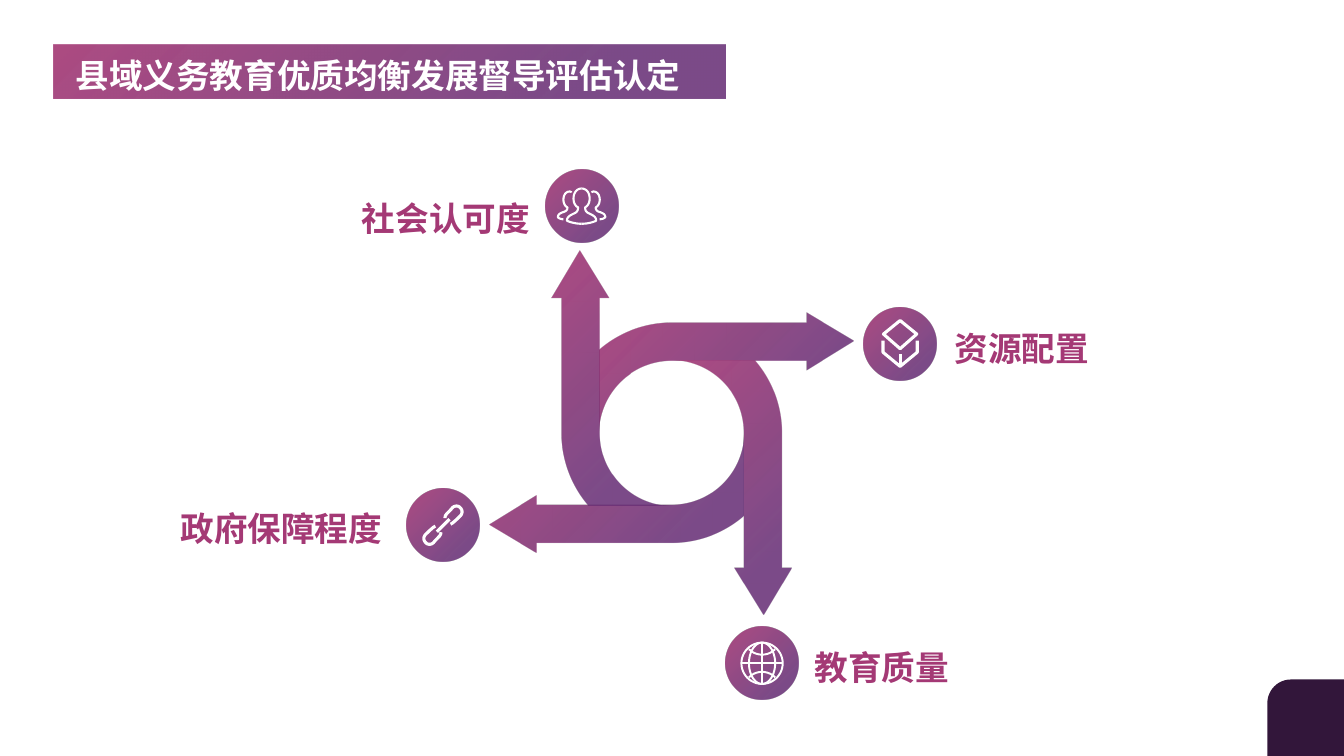
from dataclasses import dataclass
from math import acos, cos, pi, sin

from lxml.etree import SubElement
from pptx import Presentation
from pptx.dml.color import RGBColor
from pptx.enum.shapes import MSO_SHAPE as Preset
from pptx.enum.text import PP_ALIGN as Align
from pptx.oxml.ns import qn
from pptx.util import Inches, Pt

# The grid has square cells: 133.33 columns by 75 rows
CELL = Inches(0.1)
COLUMNS, ROWS = 133.33, 75
FONT = "Noto Sans CJK SC"
PURPLE, MAGENTA, DARK, WHITE = "652D74", "A43975", "32163A", "FFFFFF"
GRADIENT = [(0.21, PURPLE, 85), (1, "A53975", 90)]
DISC_SIZE = 7.25

Point = tuple[float, float]


@dataclass
class Stroke:
    points: list[Point]
    closed: bool = False

    def flipped(self, x_sign: int, y_sign: int) -> "Stroke":
        return Stroke([(x * x_sign, y * y_sign) for x, y in self.points], self.closed)


@dataclass
class Topic:
    text: str
    text_column: float
    text_row: float
    disc_column: float
    disc_row: float
    icon: list[Stroke]
    weight: float


def cells(count: float) -> int:
    return round(count * CELL)


def color(value: str) -> RGBColor:
    return RGBColor.from_string(value)


# Geometry
def arc(x_radius: float, y_radius: float, start: float = 0, end: float = 2 * pi) -> list[Point]:
    steps = 48
    angles = [start + (end - start) * i / steps for i in range(steps + 1)]
    return [(x_radius * cos(a), y_radius * sin(a)) for a in angles]


def curve(*controls: Point) -> Stroke:
    """Chain of cubic curves: a start, then three points for each curve."""
    points, steps = [controls[0]], 10
    for first in range(0, len(controls) - 1, 3):
        part = controls[first:first + 4]
        for step in range(1, steps + 1):
            t = step / steps
            weights = ((1 - t) ** 3, 3 * t * (1 - t) ** 2, 3 * t * t * (1 - t), t ** 3)
            points.append((sum(w * p[0] for w, p in zip(weights, part)),
                           sum(w * p[1] for w, p in zip(weights, part))))
    return Stroke(points)


# Icons, in cells from the middle of their disc
latitude = curve((-1.3, -1.4), (-0.6, -0.67), (0.6, -0.67), (1.3, -1.4))
GLOBE = [
    Stroke(arc(2.05, 2.05), True), Stroke(arc(1.3, 2.05), True),
    Stroke([(-2, 0), (2, 0)]), Stroke([(0, -2), (0, 2)]),
    latitude, latitude.flipped(1, -1),
]
front_person = curve(
    (0, -1.75), (0.5, -1.75), (0.8, -1.3), (0.8, -0.75), (0.8, -0.3), (0.6, 0), (0.35, 0.12),
    (0.35, 0.6), (0.6, 0.65), (0.9, 0.8), (1.2, 0.95), (1.45, 1.1), (1.45, 1.45),
    (1, 1.65), (0.5, 1.75), (0, 1.75))
back_person = curve(
    (1, -1.35), (1.05, -1.42), (1.1, -1.45), (1.2, -1.45), (1.55, -1.45), (1.8, -1.1), (1.8, -0.65),
    (1.8, -0.3), (1.65, 0), (1.4, 0.13), (1.4, 0.45), (1.65, 0.55), (1.85, 0.6),
    (2.1, 0.7), (2.35, 0.8), (2.35, 1.1), (2.2, 1.25), (2, 1.3), (1.8, 1.3))
PEOPLE = [stroke.flipped(side, 1) for stroke in (front_person, back_person) for side in (1, -1)]
BOX = [
    Stroke([(0, -2.3), (1.65, -0.95), (0, 0.5), (-1.65, -0.95)], True),
    Stroke([(-1.7, -0.3), (-1.7, 0.85), (0, 2.25), (1.7, 0.85), (1.7, -0.3)]),
    Stroke([(0, 1.05), (0, 2.25)]),
]
link = curve(
    (0.2, -0.7), (0.2, -0.9), (0.3, -1.05), (0.4, -1.15), (0.6, -1.35), (0.8, -1.55), (0.95, -1.75),
    (1.2, -1.95), (1.5, -1.95), (1.7, -1.75), (1.95, -1.5), (1.95, -1.2), (1.75, -0.95),
    (1.55, -0.75), (1.3, -0.5), (1.05, -0.3), (0.95, -0.2), (0.85, -0.15), (0.75, -0.1))
CHAIN = [link, link.flipped(-1, -1), Stroke([(-0.6, 0.65), (0.65, -0.6)])]

TOPICS = [
    Topic("资源配置", 94.7, 30.5, 89.3, 34.1, BOX, 2.2),
    Topic("社会认可度", 35.9, 17.6, 57.7, 20.45, PEOPLE, 1.5),
    Topic("政府保障程度", 17.9, 48.4, 43.95, 52.1, CHAIN, 2.2),
    Topic("教育质量", 80.8, 62.2, 75.6, 65.8, GLOBE, 1.4),
]

# One arrow of the ring, in cells from the middle of the ring
RING_CENTRE = (66.65, 42.95)
INNER, OUTER = 7.15, 10.9
ARROW = (arc(INNER, INNER, pi, 1.5 * pi)
         + [(13.35, -INNER), (13.35, -6.2), (18.05, -9.1), (13.35, -11.9), (13.35, -OUTER)]
         + arc(OUTER, OUTER, 1.5 * pi, 2 * pi - acos(-INNER / OUTER)))


# Drawing
def fill_gradient(shape) -> None:
    shape.shadow.inherit = False
    shape.line.fill.background()
    shape.fill.gradient()
    shape.fill.gradient_angle = 135
    for stop, (position, value, opacity) in zip(shape.fill.gradient_stops, GRADIENT):
        stop.position = position
        stop.color.rgb = color(value)
    tones = shape.element.spPr.iter(qn("a:srgbClr"))
    for tone, (_, _, opacity) in zip(tones, GRADIENT):
        SubElement(tone, qn("a:alpha")).set("val", str(opacity * 1000))


def add_preset(slide, preset: Preset, left: float, top: float, width: float, height: float):
    return slide.shapes.add_shape(preset, *map(cells, (left, top, width, height)))


def add_outline(slide, centre: Point, strokes: list[Stroke]):
    builder = None
    for stroke in strokes:
        start, *rest = [(cells(centre[0] + x), cells(centre[1] + y)) for x, y in stroke.points]
        if builder is None:
            builder = slide.shapes.build_freeform(*start)
        else:
            builder.move_to(*start)
        builder.add_line_segments(rest, close=stroke.closed)
    shape = builder.convert_to_shape()
    shape.shadow.inherit = False
    return shape


def add_text(slide, text: str, left: float, top: float, width: float, height: float, value: str):
    box = slide.shapes.add_textbox(*map(cells, (left, top, width, height)))
    box.text_frame.word_wrap = True
    paragraph = box.text_frame.paragraphs[0]
    paragraph.text = text
    font = paragraph.font
    font.name, font.size, font.bold = FONT, Pt(24), True
    font.color.rgb = color(value)
    defaults = next(box.element.iter(qn("a:defRPr")))
    SubElement(defaults, qn("a:ea")).set("typeface", FONT)
    return box.text_frame


def add_topic(slide, topic: Topic) -> None:
    centre = (topic.disc_column, topic.disc_row)
    corner = [middle - DISC_SIZE / 2 for middle in centre]
    fill_gradient(add_preset(slide, Preset.OVAL, *corner, DISC_SIZE, DISC_SIZE))
    icon = add_outline(slide, centre, topic.icon)
    icon.fill.background()
    icon.line.color.rgb = color(WHITE)
    icon.line.width = Pt(topic.weight)
    frame = add_text(slide, topic.text, topic.text_column, topic.text_row, 24.2, 5.3, MAGENTA)
    frame.margin_left = frame.margin_right = frame.margin_top = frame.margin_bottom = 0
    frame.paragraphs[0].line_spacing = 1.5


def main() -> None:
    presentation = Presentation()
    presentation.slide_width, presentation.slide_height = cells(COLUMNS), cells(ROWS)
    slide = presentation.slides.add_slide(presentation.slide_layouts[6])

    # Corner block
    side = 7.6
    block = add_preset(slide, Preset.ROUND_1_RECTANGLE, COLUMNS - side, ROWS - side, side, side)
    block.adjustments[0] = 0.31
    block.rotation = 270
    block.shadow.inherit = False
    block.fill.solid()
    block.fill.fore_color.rgb = color(DARK)
    block.line.fill.background()

    # Ring of four arrows, each a quarter turn on
    outline = ARROW
    for _ in range(4):
        fill_gradient(add_outline(slide, RING_CENTRE, [Stroke(outline, True)]))
        outline = [(-y, x) for x, y in outline]

    # Topics
    for topic in TOPICS:
        add_topic(slide, topic)

    # Title
    fill_gradient(add_preset(slide, Preset.RECTANGLE, 5.3, 4.4, 66.7, 5.4))
    title = add_text(slide, "县域义务教育优质均衡发展督导评估认定", 6.5, 5, 64.5, 5, WHITE)
    title.paragraphs[0].alignment = Align.JUSTIFY

    presentation.save("out.pptx")


if __name__ == "__main__":
    main()
